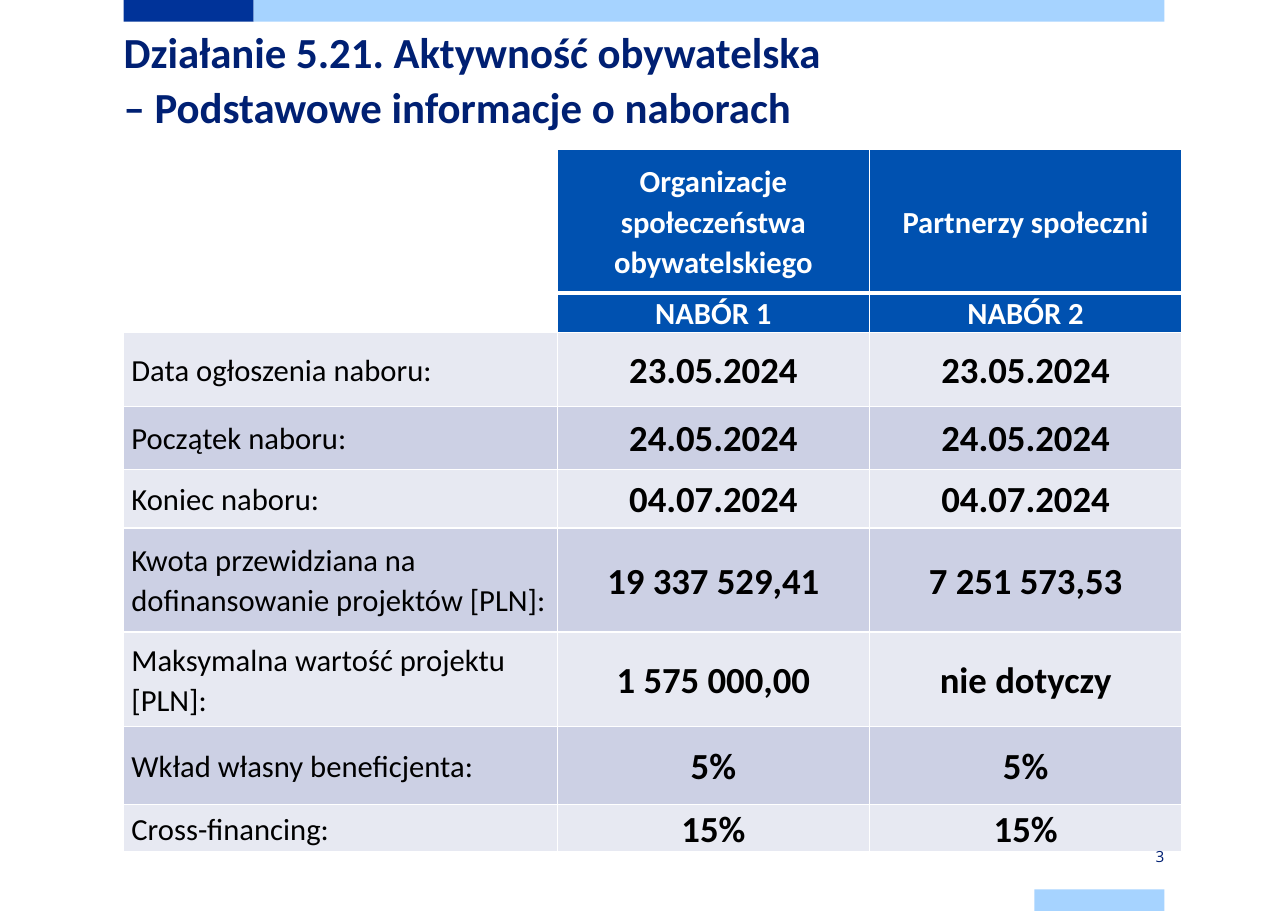
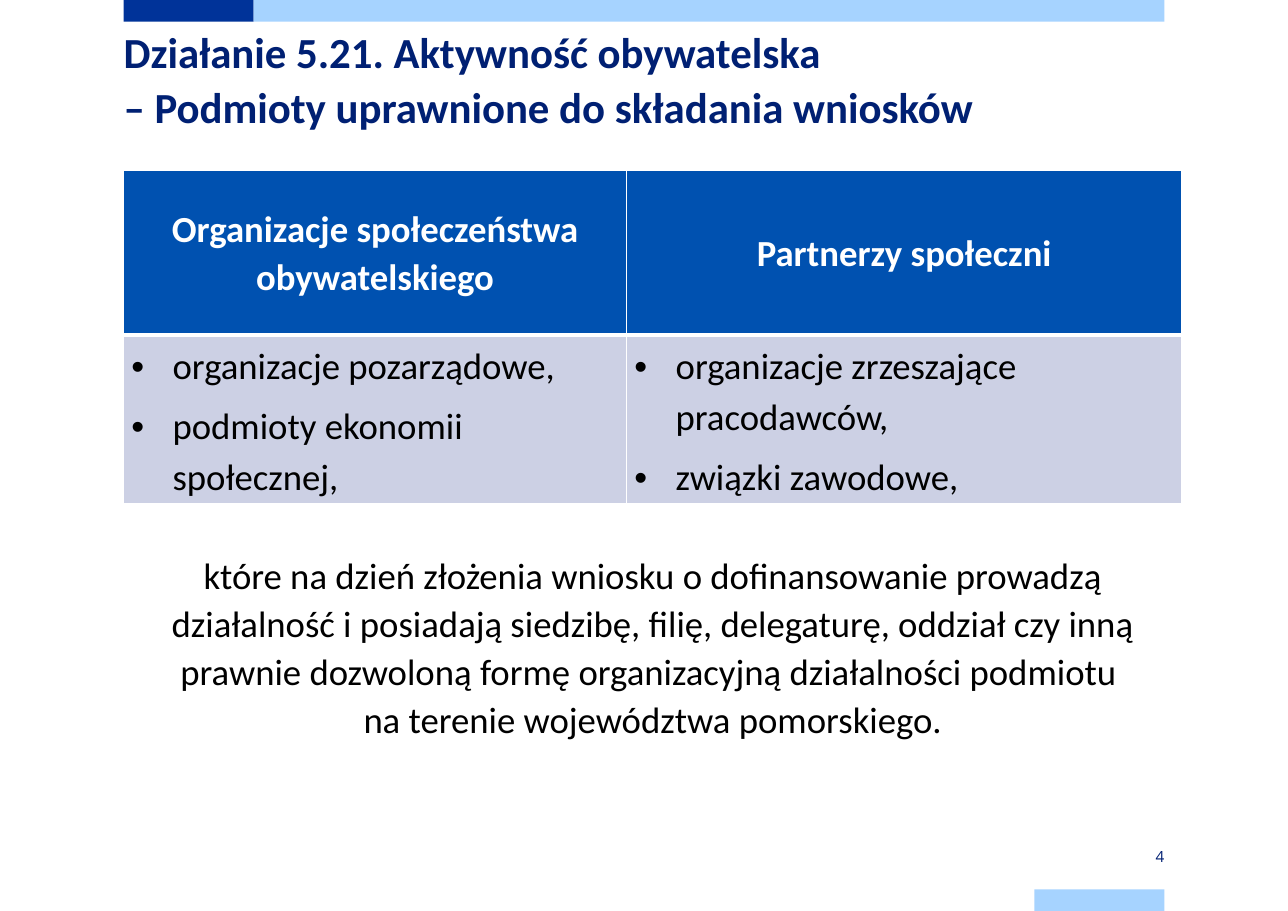
from dataclasses import dataclass
from lxml.etree import SubElement
from pptx import Presentation
from pptx.dml.color import RGBColor as Rgb
from pptx.enum.shapes import MSO_SHAPE as Preset
from pptx.enum.text import MSO_ANCHOR as Anchor, PP_ALIGN as Align
from pptx.oxml.ns import qn
from pptx.util import Cm, Pt


@dataclass(frozen=True)
class Theme:
    navy: str = "003399"
    sky: str = "A6D3FF"
    title: str = "002073"
    header: str = "0051B0"
    light: str = "E7E9F2"
    mid: str = "CCD0E4"
    white: str = "FFFFFF"
    black: str = "000000"
    font: str = "Calibri"
    number_font: str = "Open Sans"
    title_size: int = 28
    large: int = 24
    body: int = 20
    small: int = 10


theme = Theme()


def style_text(frame, size, color, bold=False, align=Align.LEFT, spacing=1.07, font=theme.font):
    for paragraph in frame.paragraphs:
        paragraph.alignment = align
        paragraph.line_spacing = spacing
        for run in paragraph.runs:
            run.font.name = font
            run.font.size = Pt(size)
            run.font.bold = bold
            run.font.color.rgb = Rgb.from_string(color)


def paint_cell(cell, fill, top=1, bottom=1):
    cell.margin_left = cell.margin_right = Cm(0.18)
    cell.margin_top = cell.margin_bottom = 0
    cell.vertical_anchor = Anchor.MIDDLE
    properties = cell._tc.get_or_add_tcPr()
    for side, width in (("lnL", 1), ("lnR", 1), ("lnT", top), ("lnB", bottom)):
        border = SubElement(properties, qn(f"a:{side}"), w=str(Pt(width)))
        SubElement(SubElement(border, qn("a:solidFill")), qn("a:srgbClr"), val=theme.white)
    cell.fill.solid()
    cell.fill.fore_color.rgb = Rgb.from_string(fill)


deck = Presentation()
deck.slide_width, deck.slide_height = Cm(29.7), Cm(21)
left = Cm(2.85)

bands = [
    (2.85, 0, 3, theme.navy),
    (5.85, 0, 21, theme.sky),
    (23.85, 20.5, 3, theme.sky),
]
pages = [
    ("3", "Podstawowe informacje o naborach", 3.45,
     [10, 7.2, 7.2], [3.3, 0.92, 1.7, 1.45, 1.35, 2.4, 2.18, 1.8, 1.07]),
    ("4", "Podmioty uprawnione do składania wniosków", 3.92,
     [11.6, 12.8], [3.8, 3.88, 5.54]),
]

tables = []
for number, topic, table_top, widths, heights in pages:
    slide = deck.slides.add_slide(deck.slide_layouts[6])
    for x, y, width, color in bands:
        band = slide.shapes.add_shape(Preset.RECTANGLE, Cm(x), Cm(y), Cm(width), Cm(0.5))
        band.shadow.inherit = False
        band.fill.solid()
        band.fill.fore_color.rgb = Rgb.from_string(color)
        band.line.fill.background()

    title = slide.shapes.add_textbox(left, Cm(0.5), Cm(26), Cm(2.8)).text_frame
    title.word_wrap = True
    title.margin_left = title.margin_right = title.margin_top = title.margin_bottom = 0
    title.text = "Działanie 5.21. Aktywność obywatelska"
    title.paragraphs[0].add_line_break()
    title.paragraphs[0].add_run().text = f"– {topic}"
    style_text(title, theme.title_size, theme.title, True, spacing=Pt(36))

    table = slide.shapes.add_table(
        len(heights), len(widths), left, Cm(table_top), Cm(sum(widths)), Cm(sum(heights))
    ).table
    table.first_row = table.horz_banding = False
    for column, width in zip(table.columns, widths):
        column.width = Cm(width)
    for row, height in zip(table.rows, heights):
        row.height = Cm(height)
    tables.append(table)

    page_number = slide.shapes.add_textbox(Cm(23.85), Cm(19.5), Cm(3), Cm(0.5)).text_frame
    page_number.word_wrap = True
    page_number.margin_left = page_number.margin_right = 0
    page_number.margin_top = page_number.margin_bottom = Cm(0.2)
    page_number.vertical_anchor = Anchor.MIDDLE
    page_number.text = number
    style_text(page_number, theme.small, theme.title, align=Align.RIGHT, spacing=1,
               font=theme.number_font)

calls, applicants = tables

call_rows = [
    ("", "Organizacje społeczeństwa obywatelskiego", "Partnerzy społeczni"),
    ("", "NABÓR 1", "NABÓR 2"),
    ("Data ogłoszenia naboru:", "23.05.2024", "23.05.2024"),
    ("Początek naboru:", "24.05.2024", "24.05.2024"),
    ("Koniec naboru:", "04.07.2024", "04.07.2024"),
    ("Kwota przewidziana na dofinansowanie projektów [PLN]:", "19 337 529,41", "7 251 573,53"),
    ("Maksymalna wartość projektu [PLN]:", "1 575 000,00", "nie dotyczy"),
    ("Wkład własny beneficjenta:", "5%", "5%"),
    ("Cross-financing:", "15%", "15%"),
]
for row, texts in enumerate(call_rows):
    is_header = row < 2
    for column, text in enumerate(texts):
        cell = calls.cell(row, column)
        is_label = column == 0
        if is_header:
            fill = theme.white if is_label else theme.header
        else:
            fill = (theme.light, theme.mid)[row % 2]
        paint_cell(cell, fill, top=3 if row == 1 else 1, bottom=3 if row == 0 else 1)
        cell.text_frame.text = text
        style_text(
            cell.text_frame,
            theme.body if is_header or is_label else theme.large,
            theme.white if is_header else theme.black,
            bold=not is_label,
            align=Align.LEFT if is_label else Align.CENTER,
        )

groups = [
    ("Organizacje społeczeństwa obywatelskiego",
     ["organizacje pozarządowe,", "podmioty ekonomii społecznej,"]),
    ("Partnerzy społeczni",
     ["organizacje zrzeszające pracodawców,", "związki zawodowe,"]),
]
for column, (heading, members) in enumerate(groups):
    header = applicants.cell(0, column)
    paint_cell(header, theme.header, bottom=3)
    header.text_frame.text = heading
    style_text(header.text_frame, theme.large, theme.white, True, Align.CENTER)

    member_list = applicants.cell(1, column)
    paint_cell(member_list, theme.mid, top=3)
    member_list.text_frame.text = "\n".join(members)
    for paragraph in member_list.text_frame.paragraphs:
        paragraph.space_after = Pt(6)
        properties = paragraph._p.get_or_add_pPr()
        properties.set("marL", str(Cm(0.95)))
        properties.set("indent", str(-Cm(0.95)))
        SubElement(properties, qn("a:buFont"), typeface="Arial")
        SubElement(properties, qn("a:buChar"), char="•")
    style_text(member_list.text_frame, theme.large, theme.black, spacing=1.14)

    paint_cell(applicants.cell(2, column), theme.white)

condition = applicants.cell(2, 0)
condition.merge(applicants.cell(2, 1))
condition.margin_top = Cm(1.1)
condition.text_frame.text = (
    "które na dzień złożenia wniosku o dofinansowanie prowadzą działalność i posiadają "
    "siedzibę, filię, delegaturę, oddział czy inną prawnie dozwoloną formę organizacyjną "
    "działalności podmiotu \vna terenie województwa pomorskiego."
)
style_text(condition.text_frame, theme.large, theme.black, align=Align.CENTER)

deck.save("out.pptx")
